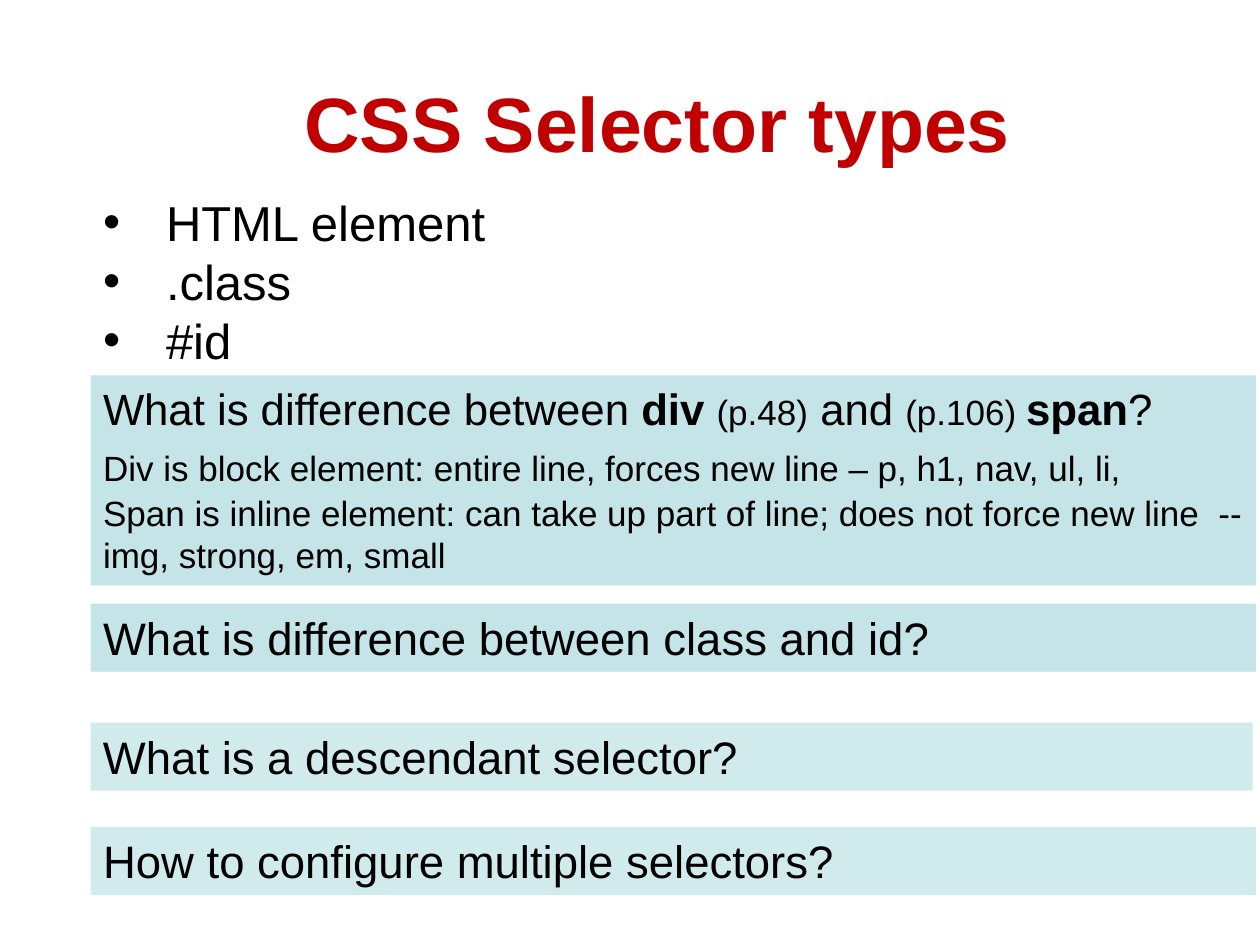
from lxml import etree
from pptx import Presentation
from pptx.dml.color import RGBColor
from pptx.enum.shapes import MSO_SHAPE
from pptx.enum.text import MSO_ANCHOR, PP_ALIGN
from pptx.oxml.ns import qn
from pptx.util import Pt

RECT = MSO_SHAPE.RECTANGLE
MIDDLE = MSO_ANCHOR.MIDDLE
LEFT, CENTER = PP_ALIGN.LEFT, PP_ALIGN.CENTER
BLACK = RGBColor(0x00, 0x00, 0x00)
RED = RGBColor(0xC0, 0x00, 0x00)
TEAL = RGBColor(0xBB, 0xE0, 0xE3)

MARGIN = 51.8
INDENT = 36


def add_run(p, text, size, bold=False, color=BLACK):
    r = p.add_run()
    r.text = text
    r.font.name = "Arial"
    r.font.size = Pt(size)
    r.font.bold = bold
    r.font.color.rgb = color


def add_panel(top, width, height, opacity):
    """Add a translucent teal panel and return its text frame."""
    sp = s.shapes.add_shape(RECT, Pt(MARGIN), Pt(top), Pt(width), Pt(height))
    sp.shadow.inherit = False
    sp.line.fill.background()
    sp.fill.solid()
    sp.fill.fore_color.rgb = TEAL
    color = sp.fill._xPr.find(qn("a:solidFill"))[0]
    etree.SubElement(color, qn("a:alpha"), val=str(opacity * 1000))
    tf = sp.text_frame
    tf.word_wrap = True
    tf.vertical_anchor = MSO_ANCHOR.TOP
    tf.paragraphs[0].alignment = LEFT
    return tf


prs = Presentation()
prs.slide_width, prs.slide_height = Pt(720), Pt(540)
s = prs.slides.add_slide(prs.slide_layouts[6])

# Title
tf = s.shapes.add_textbox(Pt(MARGIN), Pt(24.5), Pt(648), Pt(90)).text_frame
tf.word_wrap = True
tf.vertical_anchor = MIDDLE
p = tf.paragraphs[0]
p.alignment = CENTER
add_run(p, "CSS Selector types", 44, True, RED)

# Selector list
tf = s.shapes.add_textbox(Pt(MARGIN), Pt(106.5), Pt(552), Pt(108.7)).text_frame
tf.word_wrap = True
for i, text in enumerate(["HTML element", ".class", "#id"]):
    p = tf.paragraphs[0] if i == 0 else tf.add_paragraph()
    pPr = p._p.get_or_add_pPr()
    pPr.set("marL", str(Pt(INDENT)))
    pPr.set("indent", str(-Pt(INDENT)))
    etree.SubElement(pPr, qn("a:buFont"), typeface="Arial")
    etree.SubElement(pPr, qn("a:buChar"), char="•")
    add_run(p, text, 28)

# Div and span panel
tf = add_panel(214.5, 666, 120, 85)
p = tf.paragraphs[0]
for text, size, bold in [
    ("What is difference between ", 25, False),
    ("div ", 25, True),
    ("(p.48)", 20, False),
    (" and ", 25, False),
    ("(p.106) ", 20, False),
    ("span", 25, True),
    ("?", 25, False),
]:
    add_run(p, text, size, bold)

p = tf.add_paragraph()
p.alignment = LEFT
p.space_before, p.space_after = Pt(7.2), Pt(1.7)
add_run(p, "Div is block element: entire line, forces new line – p, h1, nav, ul, li,", 20)
p = tf.add_paragraph()
p.alignment = LEFT
add_run(p, "Span is inline element: can take up part of line; "
           "does not force new line  -- img, strong, em, small", 20)

# Question panels
for text, top, width, opacity in [
    ("What is difference between class and id?", 345, 666, 85),
    ("What is a descendant selector?", 413, 664, 67),
    ("How to configure multiple selectors?", 472.5, 666, 67),
]:
    tf = add_panel(top, width, 38.9, opacity)
    add_run(tf.paragraphs[0], text, 26)

prs.save("out.pptx")
